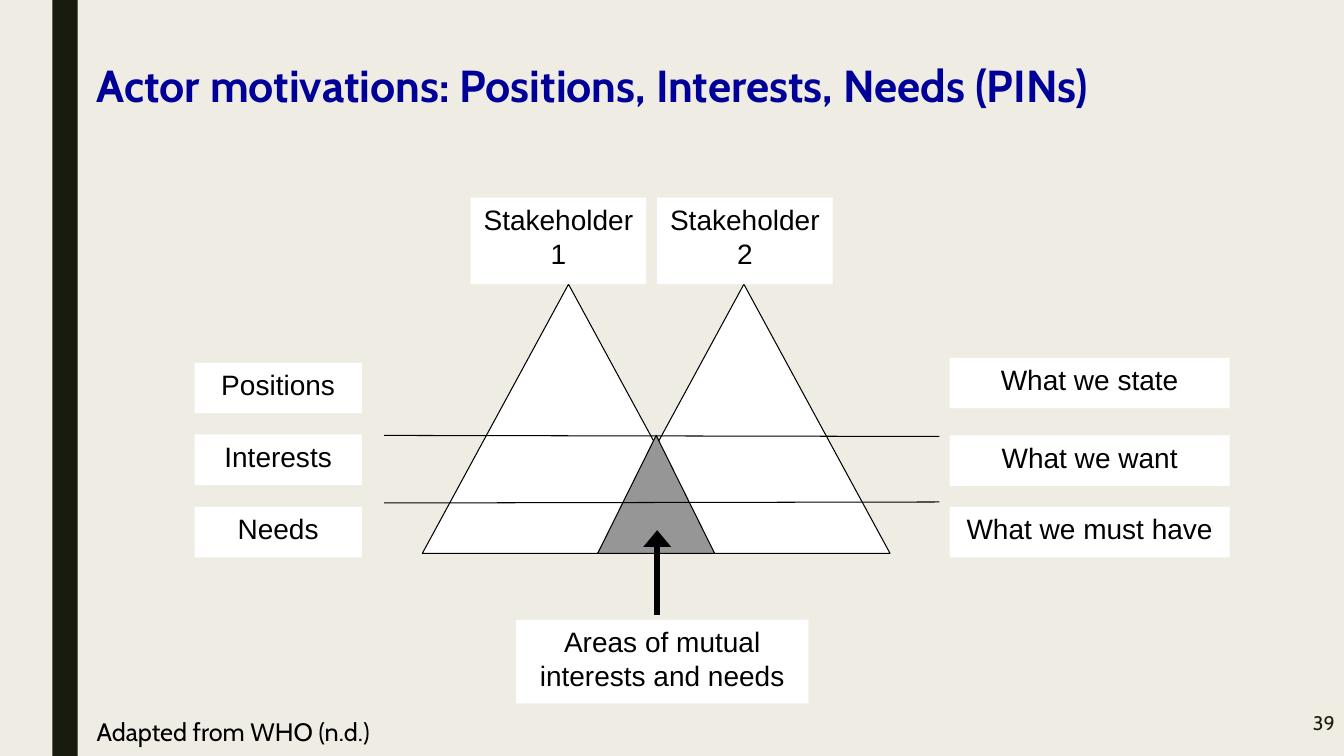
from lxml import etree
from pptx import Presentation
from pptx.dml.color import RGBColor
from pptx.enum.shapes import MSO_CONNECTOR, MSO_SHAPE
from pptx.enum.text import MSO_ANCHOR, PP_ALIGN
from pptx.oxml.ns import qn
from pptx.util import Inches, Pt

RECT = MSO_SHAPE.RECTANGLE
PEAK = MSO_SHAPE.ISOSCELES_TRIANGLE
LINE = MSO_CONNECTOR.STRAIGHT
LEFT, MID, RIGHT = PP_ALIGN.LEFT, PP_ALIGN.CENTER, PP_ALIGN.RIGHT
TOP, CENTER = MSO_ANCHOR.TOP, MSO_ANCHOR.MIDDLE

CELL = Inches(0.1)
COLS, ROWS = 133.33, 75
INK, DARK, WHITE, BLUE = "000000", "191B0E", "FFFFFF", "000099"


def grid(*cells):
    return [round(cell * CELL) for cell in cells]


def color(code):
    return RGBColor.from_string(code)


def write(shape, lines, size, font="Cabin", ink=INK, bold=False,
          align=LEFT, anchor=TOP, space=None):
    frame = shape.text_frame
    frame.word_wrap = True
    frame.vertical_anchor = anchor
    for i, line in enumerate(lines):
        para = frame.add_paragraph() if i else frame.paragraphs[0]
        para.alignment = align
        if space:
            para.line_spacing = space
        run = para.add_run()
        run.text = line
        run.font.name = font
        run.font.size = Pt(size)
        run.font.bold = bold
        run.font.color.rgb = color(ink)


def add_form(slide, kind, box, fill, edge=None):
    shape = slide.shapes.add_shape(kind, *grid(*box))
    shape.shadow.inherit = False
    shape.fill.solid()
    shape.fill.fore_color.rgb = color(fill)
    if edge:
        shape.line.color.rgb = color(edge)
        shape.line.width = Pt(0.75)
    else:
        shape.line.fill.background()
    return shape


def add_label(slide, box, *lines):
    shape = add_form(slide, RECT, box, WHITE)
    write(shape, lines, 20, "Arial", align=MID)


def add_text(slide, box, text, size, **style):
    write(slide.shapes.add_textbox(*grid(*box)), [text], size, **style)


def add_line(slide, ends, width, arrow=False):
    line = slide.shapes.add_connector(LINE, *grid(*ends))
    line.line.color.rgb = color(INK)
    line.line.width = Pt(width)
    if arrow:
        tip = etree.SubElement(line.line._get_or_add_ln(), qn("a:tailEnd"))
        for key, value in (("type", "triangle"), ("w", "lg"), ("len", "med")):
            tip.set(key, value)
    etree.SubElement(line._element.spPr, qn("a:effectLst"))


def main():
    deck = Presentation()
    deck.slide_width, deck.slide_height = grid(COLS, ROWS)
    slide = deck.slides.add_slide(deck.slide_layouts[6])
    slide.background.fill.solid()
    slide.background.fill.fore_color.rgb = color("EFEDE3")

    add_form(slide, RECT, (5.2, 0, 2.5, ROWS), DARK)
    add_text(slide, (8.6, 5.9, 111, 8.8),
             "Actor motivations: Positions, Interests, Needs (PINs)", 32,
             ink=BLUE, bold=True, space=0.89)

    for left in (41.9, 59.3):
        add_form(slide, PEAK, (left, 28.2, 29, 26.7), WHITE, INK)
    add_form(slide, PEAK, (59.3, 43.2, 11.6, 11.7), "969696", INK)
    for start, end in ((43.2, 43.3), (49.9, 49.8)):
        add_line(slide, (38.1, start, 93.2, end), 0.75)

    add_label(slide, (46.7, 19.6, 17.4, 8.6), "Stakeholder 1")
    add_label(slide, (65.2, 19.6, 17.4, 8.6), "Stakeholder", "2")
    add_label(slide, (51.2, 61.5, 29, 8.3),
              "Areas of mutual interests and needs")
    add_line(slide, (65.2, 61, 65.2, 52.6), 4, True)

    levels = (("Positions", 36, "What we state", 35.5),
              ("Interests", 43.1, "What we want", 43.2),
              ("Needs", 50.3, "What we must have", 50.3))
    for name, row, sense, level in levels:
        add_label(slide, (19.3, row, 16.6, 5), name)
        add_label(slide, (94.2, level, 27.8, 5), sense)

    add_text(slide, (8.6, 70.6, 31.5, 4), "Adapted from WHO (n.d.)", 18)
    add_text(slide, (125.7, 68.3, 7.7, 6.7), "39", 14, ink=DARK,
             align=RIGHT, anchor=CENTER)
    deck.save("out.pptx")


if __name__ == "__main__":
    main()
